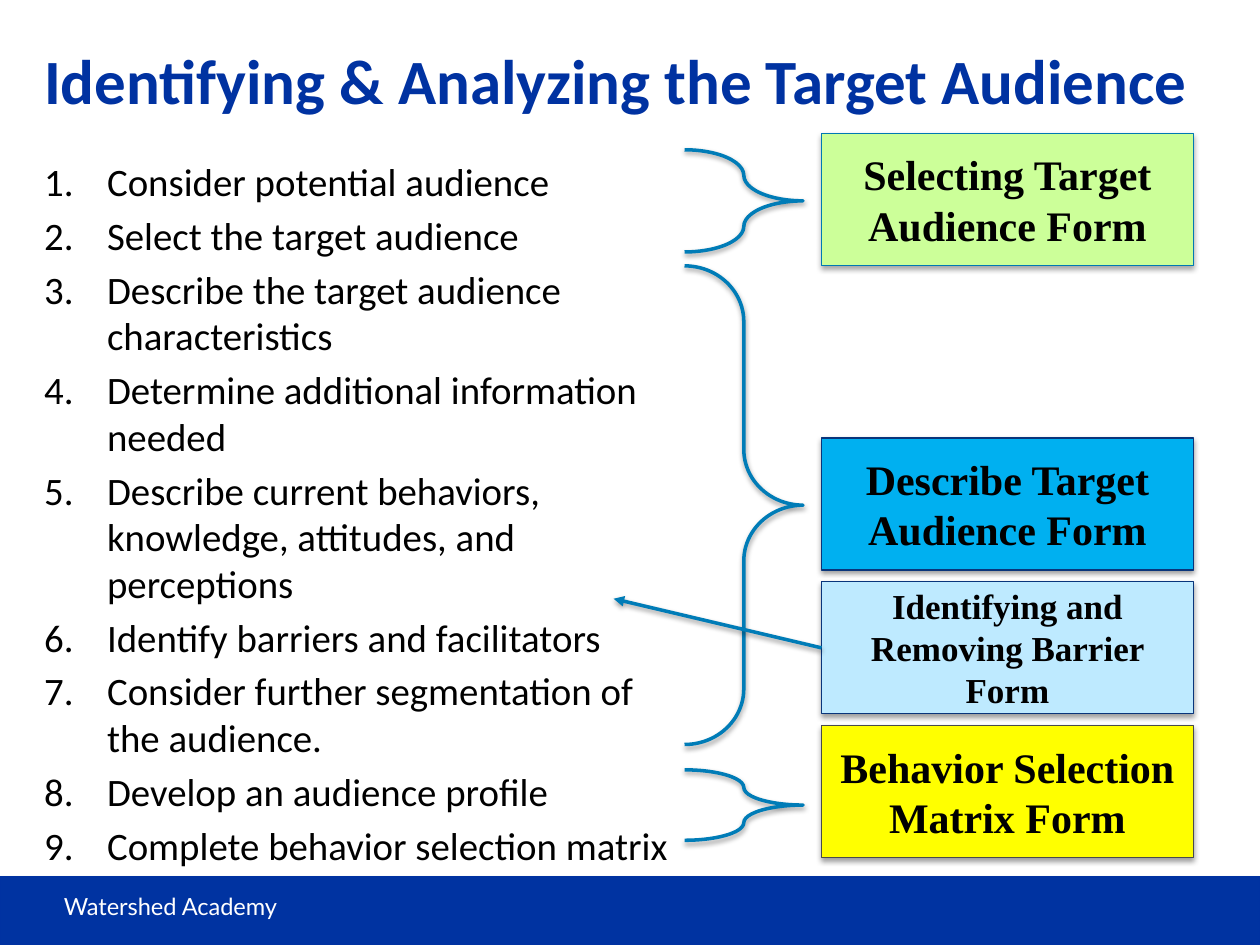
import dataclasses

import lxml.etree
import pptx
import pptx.dml.color
import pptx.enum.shapes
import pptx.enum.text
import pptx.oxml
import pptx.oxml.ns
import pptx.util

Cm, Pt = pptx.util.Cm, pptx.util.Pt
Shape = pptx.enum.shapes.MSO_SHAPE
Anchor = pptx.enum.text.MSO_ANCHOR
Align = pptx.enum.text.PP_ALIGN
rgb = pptx.dml.color.RGBColor.from_string


@dataclasses.dataclass
class Theme:
    navy: str = "0033A1"
    title_blue: str = "0032A1"
    line_blue: str = "007CB7"
    white: str = "FFFFFF"
    black: str = "000000"
    title: dict = dataclasses.field(default_factory=lambda: {
        "name": "Calibri", "size": Pt(36), "bold": True})
    step: dict = dataclasses.field(default_factory=lambda: {
        "name": "Calibri", "size": Pt(22.2)})
    form: dict = dataclasses.field(default_factory=lambda: {
        "name": "Times New Roman", "size": Pt(24), "bold": True})
    small_form: dict = dataclasses.field(default_factory=lambda: {
        "name": "Times New Roman", "size": Pt(20), "bold": True})
    footer: dict = dataclasses.field(default_factory=lambda: {
        "name": "Lato", "size": Pt(13.5)})


theme = Theme()


def write(para, text, formats, color):
    span = para.add_run()
    span.text = text
    for name, value in formats.items():
        setattr(span.font, name, value)
    span.font.color.rgb = rgb(color)


def outline(item, color, width, opacity=38, distance=1.6):
    """Set the line and a soft shadow that falls straight down."""
    item.line.color.rgb = rgb(color)
    item.line.width = Pt(width)
    properties = item._element.spPr
    if hasattr(item, "shadow"):
        item.shadow.inherit = False
        effects = properties.find(pptx.oxml.ns.qn("a:effectLst"))
    else:
        effects = lxml.etree.SubElement(properties, pptx.oxml.ns.qn("a:effectLst"))
    effects.append(pptx.oxml.parse_xml(
        f'<a:outerShdw {pptx.oxml.ns.nsdecls("a")} blurRad="{Pt(3.1)}" '
        f'dist="{Pt(distance)}" dir="5400000" rotWithShape="0">'
        f'<a:srgbClr val="{theme.black}"><a:alpha val="{opacity * 1000}"/>'
        '</a:srgbClr></a:outerShdw>'))


deck = pptx.Presentation()
deck.slide_width, deck.slide_height = Cm(25.4), Cm(19.05)
page = deck.slides.add_slide(deck.slide_layouts[6])

# Footer band
band = page.shapes.add_shape(Shape.RECTANGLE, Cm(0), Cm(17.68), Cm(25.4), Cm(1.35))
band.fill.solid()
band.fill.fore_color.rgb = rgb(theme.navy)
outline(band, theme.title_blue, 0.75, 35, 1.8)

# Footer name and title
for text, place, formats, color, anchor in (
    ("Watershed Academy", (1.04, 17.86, 8.53, 0.84),
     theme.footer, theme.white, Anchor.TOP),
    ("Identifying & Analyzing the Target Audience", (0.64, 0, 24.76, 3.18),
     theme.title, theme.title_blue, Anchor.MIDDLE),
):
    box = page.shapes.add_textbox(*map(Cm, place))
    box.text_frame.word_wrap = True
    box.text_frame.vertical_anchor = anchor
    write(box.text_frame.paragraphs[0], text, formats, color)

# Numbered steps
steps = (
    "Consider potential audience",
    "Select the target audience",
    "Describe the target audience characteristics",
    "Determine additional information needed",
    "Describe current behaviors, knowledge, attitudes, and perceptions",
    "Identify barriers and facilitators",
    "Consider further segmentation of the audience.",
    "Develop an audience profile",
    "Complete behavior selection matrix",
)
box = page.shapes.add_textbox(Cm(0.64), Cm(3.06), Cm(13.49), Cm(14.27))
frame = box.text_frame
frame.word_wrap = True
frame.margin_right = Cm(0.4)
for index, step in enumerate(steps):
    para = frame.add_paragraph() if index else frame.paragraphs[0]
    layout = para._p.get_or_add_pPr()
    layout.set("marL", str(Cm(1.27)))
    layout.set("indent", str(-Cm(1.27)))
    numbering = lxml.etree.SubElement(layout, pptx.oxml.ns.qn("a:buAutoNum"))
    numbering.set("type", "arabicPeriod")
    para.space_before = Pt(4.1 if index else 0)
    write(para, step, theme.step, theme.black)

# Braces that group the steps
for top, height, curve in ((3.02, 2.06, 0.25), (5.36, 9.65, 0.47), (15.52, 1.42, 0.25)):
    brace = page.shapes.add_shape(
        Shape.RIGHT_BRACE, Cm(13.8), Cm(top), Cm(2.39), Cm(height))
    brace.adjustments[0] = curve
    brace.adjustments[1] = 0.5
    brace.fill.background()
    outline(brace, theme.line_blue, 2)

# Form boxes
for text, top, fill, edge, formats, shadow in (
    ("Selecting Target Audience Form", 2.69, "CCFF99", "0079B3", theme.form, (35, 1.8)),
    ("Describe Target Audience Form", 8.83, "00B0F0", "09357B", theme.form, (38, 1.6)),
    ("Behavior Selection Matrix Form", 14.63, "FFFF00", "484B4B", theme.form, (38, 1.6)),
    ("Identifying and Removing Barrier Form", 11.73, "BEEAFF", "09357B",
     theme.small_form, (38, 1.6)),
):
    form = page.shapes.add_shape(
        Shape.RECTANGLE, Cm(16.56), Cm(top), Cm(7.5), Cm(2.66))
    form.fill.solid()
    form.fill.fore_color.rgb = rgb(fill)
    outline(form, edge, 0.75, *shadow)
    form.text_frame.word_wrap = True
    form.text_frame.vertical_anchor = Anchor.MIDDLE
    para = form.text_frame.paragraphs[0]
    para.alignment = Align.CENTER
    write(para, text, formats, theme.black)

# Arrow from the barrier form to its step
arrow = page.shapes.add_connector(
    pptx.enum.shapes.MSO_CONNECTOR.STRAIGHT, Cm(16.56), Cm(13.06), Cm(12.37), Cm(12.07))
outline(arrow, theme.line_blue, 2)
head = lxml.etree.SubElement(arrow.line._get_or_add_ln(), pptx.oxml.ns.qn("a:tailEnd"))
head.set("type", "triangle")

deck.save("out.pptx")
